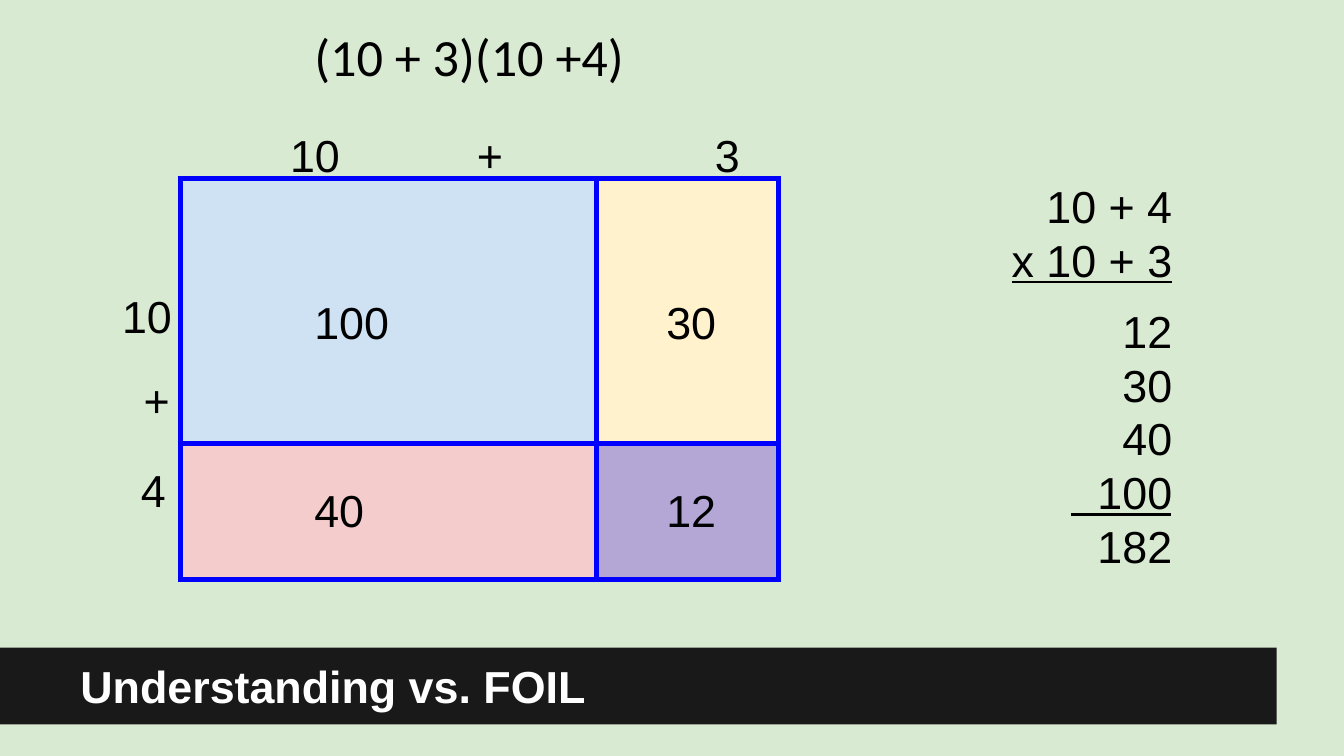
from pptx import Presentation
from pptx.dml.color import RGBColor as RGB
from pptx.enum.shapes import MSO_CONNECTOR as CONN, MSO_SHAPE as SHAPE
from pptx.enum.text import MSO_ANCHOR as ANCHOR, PP_ALIGN as ALIGN
from pptx.oxml.ns import qn
from pptx.util import Inches, Pt
from lxml.etree import SubElement

COLORS = {
    "page": "D9EAD3", "bar": "191919", "border": "0000FF",
    "text": "000000", "title": "FFFFFF",
    "products": [["CFE2F3", "FFF2CC"], ["F4CCCC", "B4A7D6"]],
}
COLS = 100
UNIT = Inches(10) // COLS


def grid(*lengths):
    return [round(n * UNIT) for n in lengths]


def rgb(name):
    return RGB.from_string(COLORS[name])


def add_text(s, at, lines, anchor=ANCHOR.TOP, align=ALIGN.LEFT,
             color="text", underlined=(), **font):
    tf = s.shapes.add_textbox(*grid(*at)).text_frame
    frame = {"word_wrap": True, "vertical_anchor": anchor}
    frame |= dict.fromkeys(
        ("margin_left", "margin_right", "margin_top", "margin_bottom"), UNIT)
    for key, value in frame.items():
        setattr(tf, key, value)
    tf.text = "\n".join(lines)
    for p in tf.paragraphs:
        p.alignment = align
        if len(lines) > 1:
            p.line_spacing = Pt(28.8)
        r = p.runs[0]
        style = {"name": "Arial", "size": Pt(24)} | font
        if r.text in underlined:
            style["underline"] = True
        for key, value in style.items():
            setattr(r.font, key, value)
        r.font.color.rgb = rgb(color)


def add_bar(s, at):
    sp = s.shapes.add_shape(SHAPE.RECTANGLE, *grid(*at))
    sp.shadow.inherit = False
    sp.fill.solid()
    sp.fill.fore_color.rgb = rgb("bar")
    sp.line.fill.background()


def add_rule(s, x1, x2, y):
    line = s.shapes.add_connector(CONN.STRAIGHT, *grid(x1, y, x2, y))
    line.line.color.rgb = rgb("text")
    line.line.width = Pt(1.5)
    SubElement(line._element.spPr, qn("a:effectLst"))


def border_cell(cell):
    props = cell._tc.get_or_add_tcPr()
    for i, side in enumerate(("lnL", "lnR", "lnT", "lnB")):
        ln = props.makeelement(qn(f"a:{side}"), {"w": str(Pt(3))})
        fill = SubElement(ln, qn("a:solidFill"))
        SubElement(fill, qn("a:srgbClr"), val=COLORS["border"])
        props.insert(i, ln)


def add_area_model(s, x, y, widths, heights):
    frame = s.shapes.add_table(len(heights), len(widths),
                               *grid(x, y, sum(widths), sum(heights)))
    table = frame.table
    for col, width in zip(table.columns, grid(*widths)):
        col.width = width
    for row, height in zip(table.rows, grid(*heights)):
        row.height = height
    for i, fills in enumerate(COLORS["products"]):
        for j, fill in enumerate(fills):
            cell = table.cell(i, j)
            cell.fill.solid()
            cell.fill.fore_color.rgb = RGB.from_string(fill)
            border_cell(cell)


def main():
    prs = Presentation()
    prs.slide_width = UNIT * COLS
    prs.slide_height = prs.slide_width * 9 // 16
    s = prs.slides.add_slide(prs.slide_layouts[6])
    s.background.fill.solid()
    s.background.fill.fore_color.rgb = rgb("page")

    add_bar(s, (0, 48.2, 95, 5.7))
    add_area_model(s, 13.4, 13.3, (31, 13.5), (19.7, 10.1))

    for x, label in ((20.6, "10"), (34.5, "+"), (52.2, "3")):
        add_text(s, (x, 8.5, 6, 4.2), [label])
    for x, y, h, label in ((8.1, 20.1, 6.7, "10"), (9.7, 26.8, 5.9, "+"),
                           (9.5, 33.5, 5.9, "4")):
        add_text(s, (x, y, 6, h), [label], ANCHOR.MIDDLE)
    for y, products in ((20.9, ("100", "30")), (34.9, ("40", "12"))):
        for x, product in zip((22.4, 48.6), products):
            add_text(s, (x, y, 8, 6.7), [product])

    add_text(s, (72.3, 12.3, 15.9, 10), ["10 + 4", "x 10 + 3"],
             align=ALIGN.RIGHT, underlined=("x 10 + 3",))
    add_text(s, (72.3, 21.6, 15.9, 22.3), ["12", "30", "40", "100", "182"],
             align=ALIGN.RIGHT)
    add_rule(s, 79.7, 87.1, 38.3)

    add_text(s, (22.4, 0, 32.8, 8.2), ["(10 + 3)(10 +4)"], ANCHOR.MIDDLE,
             name="Calibri", size=Pt(28))
    add_text(s, (5, 48.2, 90, 5.7), ["Understanding vs. FOIL"], ANCHOR.MIDDLE,
             color="title", bold=True)
    prs.save("out.pptx")


if __name__ == "__main__":
    main()
